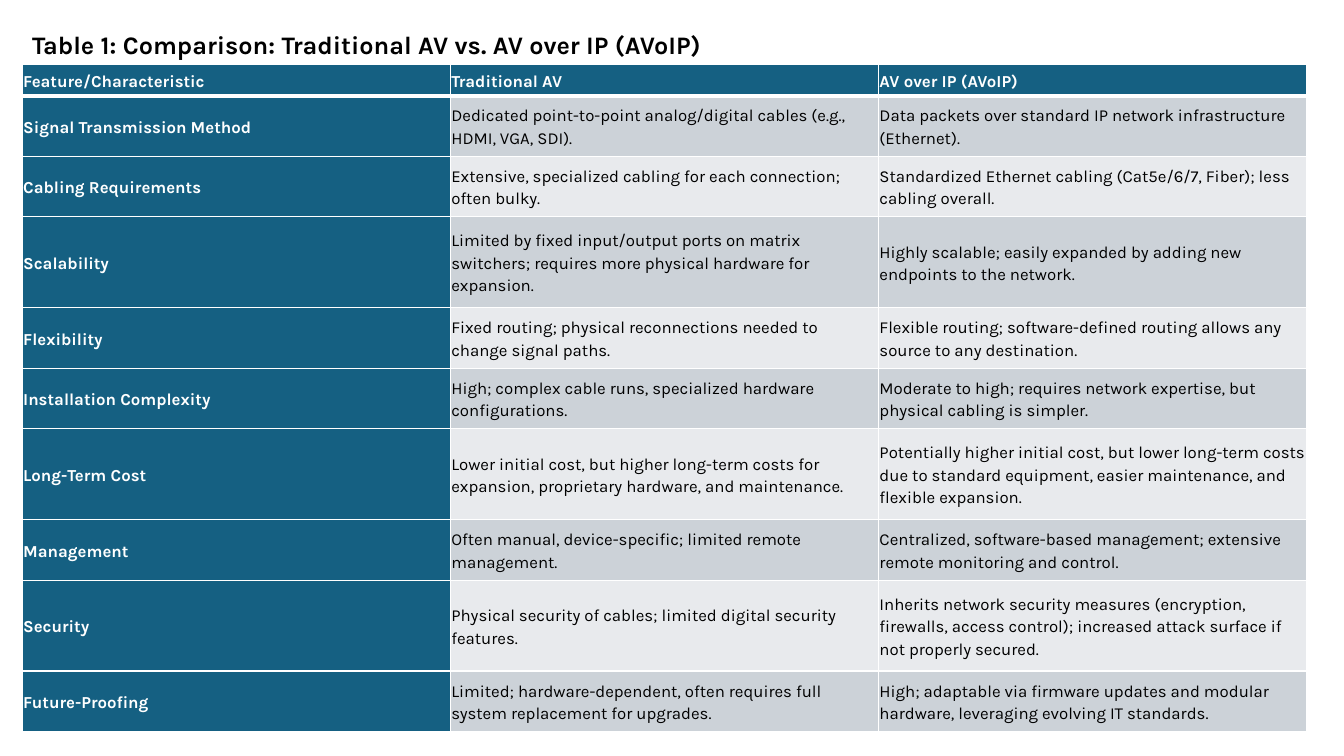
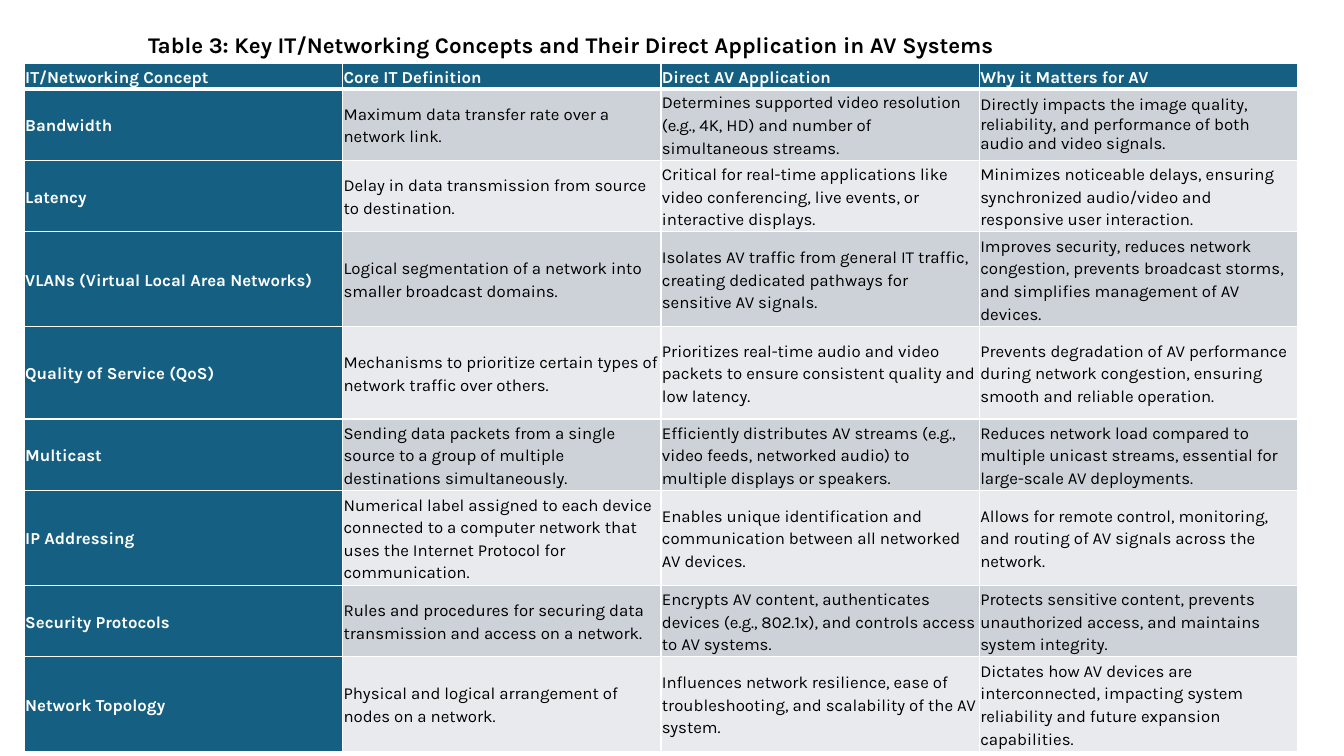
from dataclasses import dataclass

from lxml.etree import SubElement
from pptx import Presentation
from pptx.dml.color import RGBColor
from pptx.enum.text import MSO_ANCHOR as Anchor, MSO_AUTO_SIZE as AutoSize
from pptx.oxml.ns import qn
from pptx.presentation import Presentation as Deck
from pptx.slide import Slide
from pptx.table import _Cell as Cell
from pptx.text.text import _Paragraph as Paragraph
from pptx.util import Inches, Pt

SLIDE_WIDTH, SLIDE_HEIGHT = 13.33, 7.5
BLANK_LAYOUT = 6
FONT = "Karla"
BLUE, WHITE, BLACK = "156082", "FFFFFF", "000000"
BANDS = ("CCD2D8", "E8EAED")
CELL_SIZE = 12
CELL_INSET = 0.01
LINE_SPACING, SPACE_AFTER = 1.15, 8
THIN_RULE, HEADER_RULE = 1, 3


@dataclass(frozen=True)
class Title:
    text: str
    left: float
    top: float
    height: float
    size: int


@dataclass(frozen=True)
class Row:
    """One table row; lines is its height in text lines."""
    lines: int
    texts: tuple[str, ...]


@dataclass(frozen=True)
class TableSlide:
    title: Title
    left: float
    top: float
    width: float
    height: float
    header_height: float
    headings: tuple[str, ...]
    rows: tuple[Row, ...]
    single_spaced: tuple[tuple[int, int], ...] = ()


COMPARISON = TableSlide(
    Title("Table 1: Comparison: Traditional AV vs. AV over IP (AVoIP)", 0.22, 0.24, 0.4, 18),
    left=0.22, top=0.64, width=12.74, height=6.62, header_height=0.31,
    headings=("Feature/Characteristic", "Traditional AV", "AV over IP (AVoIP)"),
    rows=(
        Row(2, ("Signal Transmission Method",
                "Dedicated point-to-point analog/digital cables (e.g., HDMI, VGA, SDI).",
                "Data packets over standard IP network infrastructure (Ethernet).")),
        Row(2, ("Cabling Requirements",
                "Extensive, specialized cabling for each connection; often bulky.",
                "Standardized Ethernet cabling (Cat5e/6/7, Fiber); less cabling overall.")),
        Row(3, ("Scalability",
                "Limited by fixed input/output ports on matrix switchers; "
                "requires more physical hardware for expansion.",
                "Highly scalable; easily expanded by adding new endpoints to the network.")),
        Row(2, ("Flexibility",
                "Fixed routing; physical reconnections needed to change signal paths.",
                "Flexible routing; software-defined routing allows any source to any destination.")),
        Row(2, ("Installation Complexity",
                "High; complex cable runs, specialized hardware configurations.",
                "Moderate to high; requires network expertise, but physical cabling is simpler.")),
        Row(3, ("Long-Term Cost",
                "Lower initial cost, but higher long-term costs for expansion, "
                "proprietary hardware, and maintenance.",
                "Potentially higher initial cost, but lower long-term costs due to "
                "standard equipment, easier maintenance, and flexible expansion.")),
        Row(2, ("Management",
                "Often manual, device-specific; limited remote management.",
                "Centralized, software-based management; extensive remote monitoring and control.")),
        Row(3, ("Security",
                "Physical security of cables; limited digital security features.",
                "Inherits network security measures (encryption, firewalls, access control); "
                "increased attack surface if not properly secured.")),
        Row(2, ("Future-Proofing",
                "Limited; hardware-dependent, often requires full system replacement for upgrades.",
                "High; adaptable via firmware updates and modular hardware, "
                "leveraging evolving IT standards.")),
    ),
)

CONCEPTS = TableSlide(
    Title("Table 3: Key IT/Networking Concepts and Their Direct Application in AV Systems",
          1.37, 0.26, 0.37, 16),
    left=0.24, top=0.63, width=12.63, height=6.65, header_height=0.23,
    headings=("IT/Networking Concept", "Core IT Definition",
              "Direct AV Application", "Why it Matters for AV"),
    rows=(
        Row(3, ("Bandwidth",
                "Maximum data transfer rate over a network link.",
                "Determines supported video resolution (e.g., 4K, HD) and number of "
                "simultaneous streams.",
                "Directly impacts the image quality, reliability, and performance of both "
                "audio and video signals.")),
        Row(3, ("Latency",
                "Delay in data transmission from source to destination.",
                "Critical for real-time applications like video conferencing, live events, "
                "or interactive displays.",
                "Minimizes noticeable delays, ensuring synchronized audio/video and "
                "responsive user interaction.")),
        Row(4, ("VLANs (Virtual Local Area Networks)",
                "Logical segmentation of a network into smaller broadcast domains.",
                "Isolates AV traffic from general IT traffic, creating dedicated pathways "
                "for sensitive AV signals.",
                "Improves security, reduces network congestion, prevents broadcast storms, "
                "and simplifies management of AV devices.")),
        Row(4, ("Quality of Service (QoS)",
                "Mechanisms to prioritize certain types of network traffic over others.",
                "Prioritizes real-time audio and video packets to ensure consistent quality "
                "and low latency.",
                "Prevents degradation of AV performance during network congestion, "
                "ensuring smooth and reliable operation.")),
        Row(3, ("Multicast",
                "Sending data packets from a single source to a group of multiple "
                "destinations simultaneously.",
                "Efficiently distributes AV streams (e.g., video feeds, networked audio) to "
                "multiple displays or speakers.",
                "Reduces network load compared to multiple unicast streams, essential for "
                "large-scale AV deployments.")),
        Row(4, ("IP Addressing",
                "Numerical label assigned to each device connected to a computer network "
                "that uses the Internet Protocol for communication.",
                "Enables unique identification and communication between all networked "
                "AV devices.",
                "Allows for remote control, monitoring, and routing of AV signals across "
                "the network.")),
        Row(3, ("Security Protocols",
                "Rules and procedures for securing data transmission and access on a network.",
                "Encrypts AV content, authenticates devices (e.g., 802.1x), and controls "
                "access to AV systems.",
                "Protects sensitive content, prevents unauthorized access, and maintains "
                "system integrity.")),
        Row(4, ("Network Topology",
                "Physical and logical arrangement of nodes on a network.",
                "Influences network resilience, ease of troubleshooting, and scalability "
                "of the AV system.",
                "Dictates how AV devices are interconnected, impacting system reliability "
                "and future expansion capabilities.")),
    ),
    single_spaced=((1, 3),),
)


def rgb(value: str) -> RGBColor:
    return RGBColor.from_string(value)


def add_span(para: Paragraph, text: str, size: int, color: str, bold: bool) -> None:
    span = para.add_run()
    span.text = text
    span.font.name = FONT
    span.font.size = Pt(size)
    span.font.bold = bold
    span.font.color.rgb = rgb(color)


def add_title(page: Slide, title: Title) -> None:
    width = SLIDE_WIDTH - title.left
    box = page.shapes.add_textbox(
        *map(Inches, (title.left, title.top, width, title.height)))
    frame = box.text_frame
    frame.word_wrap = True
    frame.auto_size = AutoSize.SHAPE_TO_FIT_TEXT
    frame.vertical_anchor = Anchor.MIDDLE
    add_span(frame.paragraphs[0], title.text, title.size, BLACK, True)


def set_borders(cell: Cell, top: int, bottom: int) -> None:
    """Rule all four sides in white; top and bottom are widths in points."""
    properties = cell._tc.get_or_add_tcPr()
    sides = {"L": THIN_RULE, "R": THIN_RULE, "T": top, "B": bottom}
    for side, points in sides.items():
        line = SubElement(properties, qn(f"a:ln{side}"), w=str(Pt(points)))
        fill = SubElement(line, qn("a:solidFill"))
        SubElement(fill, qn("a:srgbClr"), val=WHITE)


def fill_cell(cell: Cell, text: str, row: int, column: int, single_spaced: bool) -> None:
    set_borders(cell,
                top=HEADER_RULE if row == 1 else THIN_RULE,
                bottom=HEADER_RULE if row == 0 else THIN_RULE)
    heading = row == 0 or column == 0
    cell.fill.solid()
    cell.fill.fore_color.rgb = rgb(BLUE if heading else BANDS[(row - 1) % 2])
    cell.vertical_anchor = Anchor.MIDDLE
    cell.margin_left = cell.margin_right = Inches(CELL_INSET)
    cell.margin_top = cell.margin_bottom = Inches(CELL_INSET)
    para = cell.text_frame.paragraphs[0]
    if not single_spaced:
        para.line_spacing = LINE_SPACING
        para.space_after = Pt(SPACE_AFTER)
    add_span(para, text, CELL_SIZE, WHITE if heading else BLACK, heading)


def add_grid(page: Slide, content: TableSlide) -> None:
    """Draw the table, sharing the height below the header by text lines."""
    rows = content.rows
    line_height = (content.height - content.header_height) / sum(row.lines for row in rows)
    heights = [content.header_height, *(row.lines * line_height for row in rows)]
    texts = [content.headings, *(row.texts for row in rows)]
    table = page.shapes.add_table(
        len(texts), len(content.headings),
        *map(Inches, (content.left, content.top, content.width, content.height))).table
    table.first_col = True
    for row, (height, row_texts) in enumerate(zip(heights, texts)):
        table.rows[row].height = Inches(height)
        for column, text in enumerate(row_texts):
            fill_cell(table.cell(row, column), text, row, column,
                      (row, column) in content.single_spaced)


def add_table_slide(deck: Deck, content: TableSlide) -> None:
    page = deck.slides.add_slide(deck.slide_layouts[BLANK_LAYOUT])
    add_title(page, content.title)
    add_grid(page, content)


def main() -> None:
    deck = Presentation()
    deck.slide_width, deck.slide_height = Inches(SLIDE_WIDTH), Inches(SLIDE_HEIGHT)
    for content in (COMPARISON, CONCEPTS):
        add_table_slide(deck, content)
    deck.save("out.pptx")


if __name__ == "__main__":
    main()
